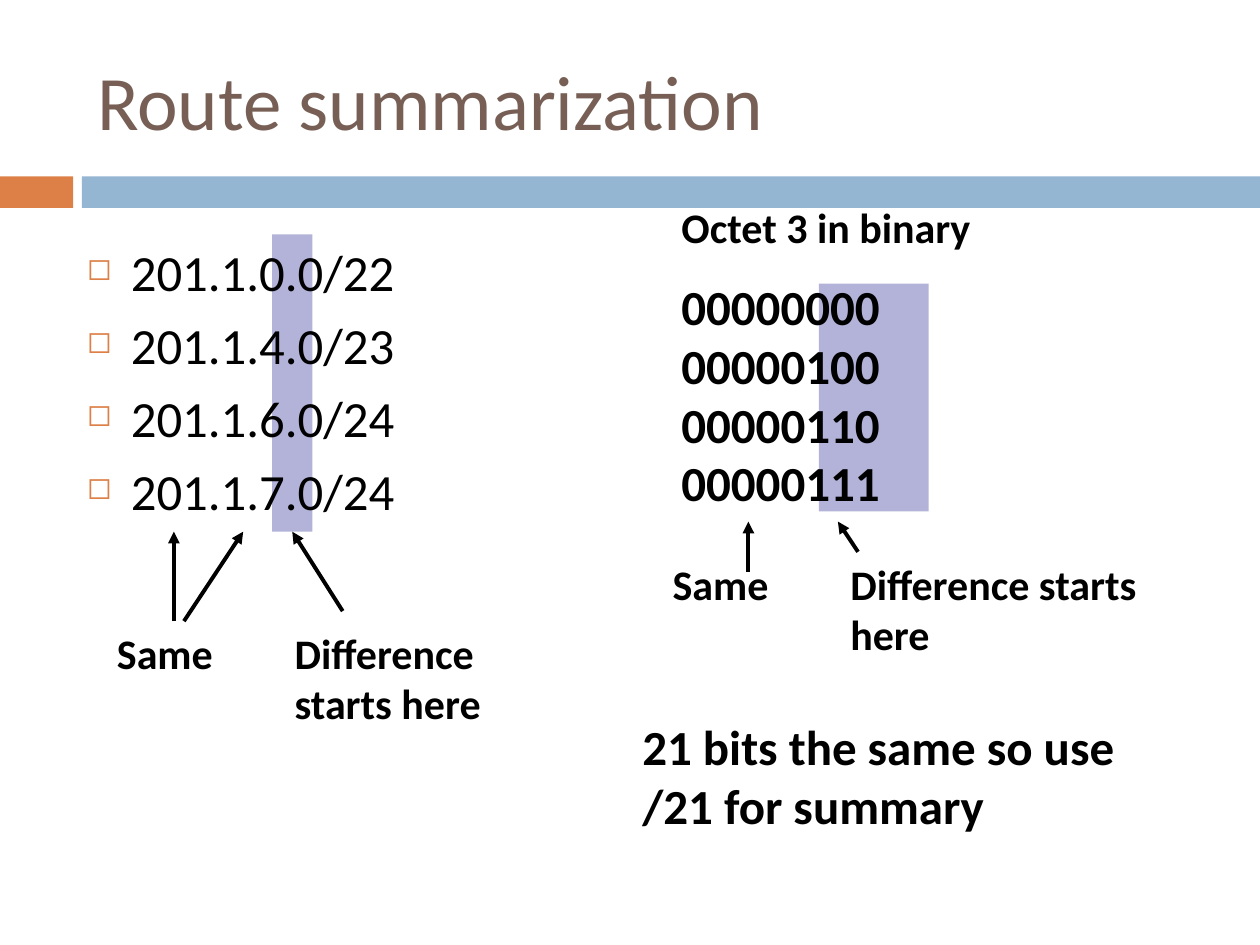
from dataclasses import dataclass

from lxml import etree
from pptx import Presentation
from pptx.dml.color import RGBColor
from pptx.enum.shapes import MSO_CONNECTOR, MSO_SHAPE
from pptx.enum.text import MSO_ANCHOR, PP_ALIGN
from pptx.oxml.ns import qn
from pptx.util import Inches, Pt

RECT = MSO_SHAPE.RECTANGLE
STRAIGHT = MSO_CONNECTOR.STRAIGHT
MIDDLE = MSO_ANCHOR.MIDDLE
LEFT = PP_ALIGN.LEFT
BOTTOM_SITE = 2

COLORS = {
    "orange": "DD8047",
    "blue": "94B6D2",
    "highlight": "B3B3D9",
    "title": "775F55",
    "text": "000000",
}
TITLE_FONT = {"name": "Calibri", "size": Pt(44), "bold": False}
ROUTE_FONT = {"name": "Calibri", "size": Pt(29), "bold": False}
LABEL_FONT = {"name": "Calibri", "size": Pt(24), "bold": True}
BINARY_FONT = {"name": "Calibri", "size": Pt(28), "bold": True}


@dataclass
class Box:
    left: float
    top: float
    width: float
    height: float

    def lengths(self):
        return [Inches(v) for v in (self.left, self.top, self.width, self.height)]


@dataclass
class Label:
    box: Box
    text: str
    font: dict


@dataclass
class Arrow:
    start: tuple
    end: tuple


BARS = [(Box(0, 1.4, 0.58, 0.25), "orange"), (Box(0.65, 1.4, 9.35, 0.25), "blue")]
BITS_BOX = Box(6.5, 2.25, 0.87, 1.81)
OCTET_BOX = Box(2.16, 1.86, 0.32, 2.36)
ROUTES = ["201.1.0.0/22", "201.1.4.0/23", "201.1.6.0/24", "201.1.7.0/24"]
OCTETS = ["00000000", "00000100", "00000110", "00000111"]
LABELS = [
    Label(Box(0.83, 4.93, 1.34, 0.5), "Same", LABEL_FONT),
    Label(Box(2.24, 4.93, 2.44, 0.9), "Difference starts here", LABEL_FONT),
    Label(Box(5.24, 4.38, 1.34, 0.5), "Same", LABEL_FONT),
    Label(Box(6.65, 4.38, 2.68, 0.9), "Difference starts here", LABEL_FONT),
    Label(Box(5, 5.64, 4.57, 1.03), "21 bits the same so use /21 for summary", BINARY_FONT),
]
ARROWS = [
    Arrow((1.38, 4.93), (1.38, 4.22)),
    Arrow((1.46, 4.93), (1.93, 4.22)),
    Arrow((5.94, 4.54), (5.94, 4.14)),
    Arrow((6.81, 4.38), (6.65, 4.14)),
]
OCTET_ARROW = Arrow((2.72, 4.85), (2.32, 4.22))


def rgb(color: str) -> RGBColor:
    return RGBColor.from_string(COLORS[color])


def add_rect(s, box: Box, color: str):
    sp = s.shapes.add_shape(RECT, *box.lengths())
    sp.shadow.inherit = False
    sp.fill.solid()
    sp.fill.fore_color.rgb = rgb(color)
    sp.line.fill.background()
    return sp


def write(p, text: str, font: dict, color: str = "text") -> None:
    """Set a paragraph's text and format all its runs."""
    p.text = text
    p.alignment = LEFT
    for r in p.runs:
        for name, value in font.items():
            setattr(r.font, name, value)
        r.font.color.rgb = rgb(color)


def add_text(s, box: Box):
    tf = s.shapes.add_textbox(*box.lengths()).text_frame
    tf.word_wrap = True
    return tf


def add_bullet(p) -> None:
    pPr = p._p.get_or_add_pPr()
    pPr.set("marL", str(Inches(0.35)))
    pPr.set("indent", str(-Inches(0.35)))
    color = etree.SubElement(pPr, qn("a:buClr"))
    etree.SubElement(color, qn("a:srgbClr"), val=COLORS["orange"])
    etree.SubElement(pPr, qn("a:buSzPct"), val="60000")
    etree.SubElement(pPr, qn("a:buChar"), char="◻")


def add_arrow(s, arrow: Arrow):
    ends = [Inches(v) for v in arrow.start + arrow.end]
    line = s.shapes.add_connector(STRAIGHT, *ends)
    line.line.width = Pt(2.25)
    line.line.color.rgb = rgb("text")
    ln = line.line._get_or_add_ln()
    etree.SubElement(ln, qn("a:tailEnd"), type="triangle")
    etree.SubElement(line._element.spPr, qn("a:effectLst"))
    return line


def main() -> None:
    prs = Presentation()
    prs.slide_width, prs.slide_height = Inches(10), Inches(7.5)
    s = prs.slides.add_slide(prs.slide_layouts[5])

    # Title and the bars below it
    title = s.shapes.title
    title.left, title.top, title.width, title.height = Box(0.67, 0.25, 8.92, 1.08).lengths()
    title.text_frame.vertical_anchor = MIDDLE
    write(title.text_frame.paragraphs[0], "Route summarization", TITLE_FONT, "title")
    for box, color in BARS:
        add_rect(s, box, color)

    # Highlights behind the differing digits
    add_rect(s, BITS_BOX, "highlight")
    octet_highlight = add_rect(s, OCTET_BOX, "highlight")

    # Route list
    tf = add_text(s, Box(0.59, 1.86, 3.39, 2.52))
    for i, route in enumerate(ROUTES):
        p = tf.add_paragraph() if i else tf.paragraphs[0]
        write(p, route, ROUTE_FONT)
        p.space_before = Pt(7)
        add_bullet(p)

    # Third octet in binary
    tf = add_text(s, Box(5.31, 1.55, 3.94, 2.6))
    write(tf.paragraphs[0], "Octet 3 in binary", LABEL_FONT)
    p = tf.add_paragraph()
    write(p, "\v".join(OCTETS), BINARY_FONT)
    p.space_before = Pt(14)

    # Labels and arrows
    for label in LABELS:
        write(add_text(s, label.box).paragraphs[0], label.text, label.font)
    for arrow in ARROWS:
        add_arrow(s, arrow)
    add_arrow(s, OCTET_ARROW).end_connect(octet_highlight, BOTTOM_SITE)

    prs.save("out.pptx")


if __name__ == "__main__":
    main()
